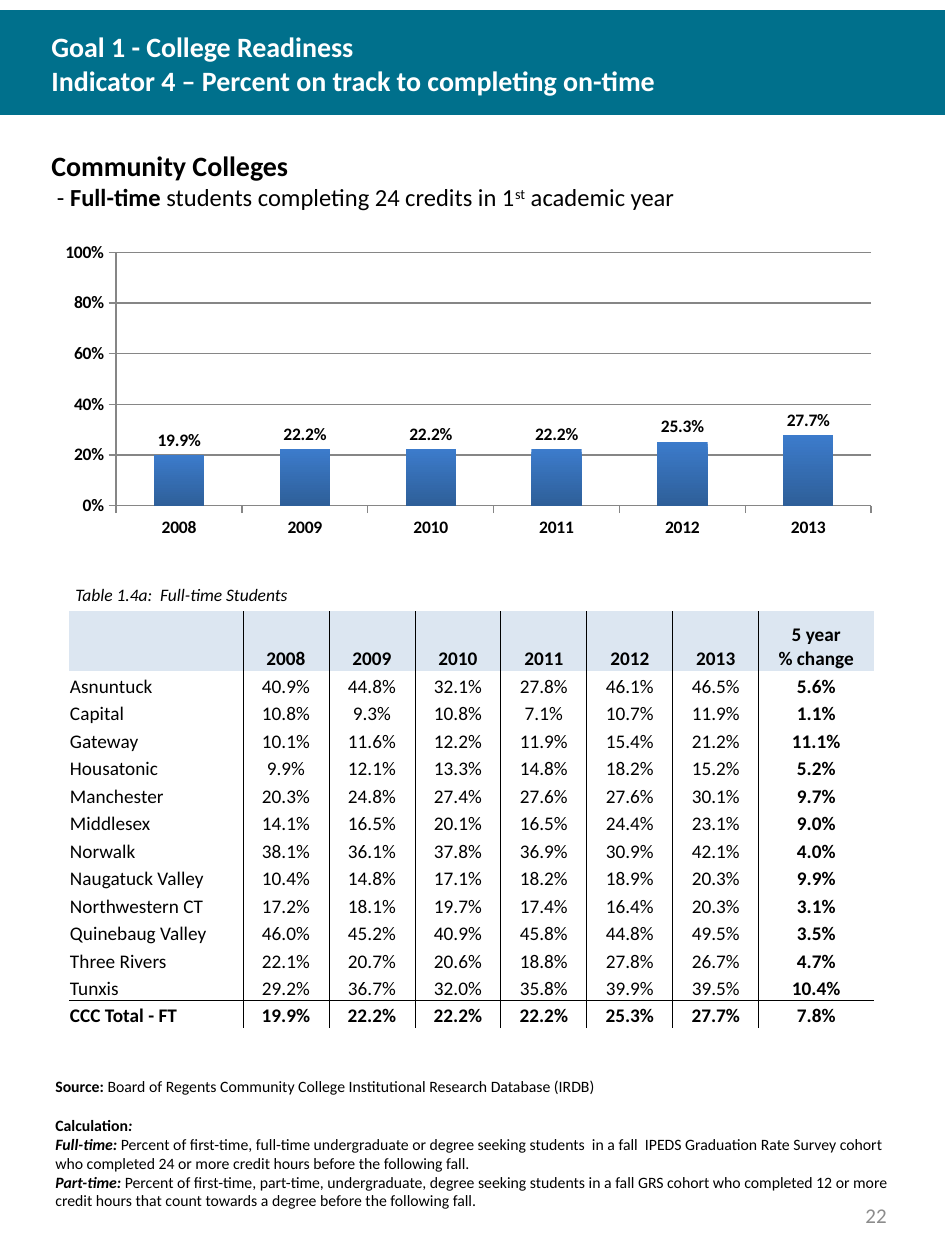
import copy

import pptx
import pptx.chart.data
import pptx.dml.color
import pptx.enum.chart
import pptx.enum.shapes
import pptx.enum.text
import pptx.oxml
import pptx.oxml.ns
import pptx.util
from lxml import etree

EMU_PER_PX = 914400 / 126
FONT = "Calibri"
BLACK, WHITE, TEAL, GREY = "000000", "FFFFFF", "00708C", "8C8C8C"
HEADER_FILL, GRID = "DCE6F1", "868686"
BAR_TOP, BAR_BOTTOM = "3C7BCB", "2E5F99"
ANCHOR = pptx.enum.text.MSO_ANCHOR
ALIGN = pptx.enum.text.PP_ALIGN

YEARS = ["2008", "2009", "2010", "2011", "2012", "2013"]
TOTALS = [0.199, 0.222, 0.222, 0.222, 0.253, 0.277]
# College, one rate per year, then the change over five years
COLLEGES = [
    ("Asnuntuck", 40.9, 44.8, 32.1, 27.8, 46.1, 46.5, 5.6),
    ("Capital", 10.8, 9.3, 10.8, 7.1, 10.7, 11.9, 1.1),
    ("Gateway", 10.1, 11.6, 12.2, 11.9, 15.4, 21.2, 11.1),
    ("Housatonic", 9.9, 12.1, 13.3, 14.8, 18.2, 15.2, 5.2),
    ("Manchester", 20.3, 24.8, 27.4, 27.6, 27.6, 30.1, 9.7),
    ("Middlesex", 14.1, 16.5, 20.1, 16.5, 24.4, 23.1, 9.0),
    ("Norwalk", 38.1, 36.1, 37.8, 36.9, 30.9, 42.1, 4.0),
    ("Naugatuck Valley", 10.4, 14.8, 17.1, 18.2, 18.9, 20.3, 9.9),
    ("Northwestern CT", 17.2, 18.1, 19.7, 17.4, 16.4, 20.3, 3.1),
    ("Quinebaug Valley", 46.0, 45.2, 40.9, 45.8, 44.8, 49.5, 3.5),
    ("Three Rivers", 22.1, 20.7, 20.6, 18.8, 27.8, 26.7, 4.7),
    ("Tunxis", 29.2, 36.7, 32.0, 35.8, 39.9, 39.5, 10.4),
    ("CCC Total - FT", 19.9, 22.2, 22.2, 22.2, 25.3, 27.7, 7.8),
]


def px(length):
    return pptx.util.Emu(round(length * EMU_PER_PX))


def rgb(color):
    return pptx.dml.color.RGBColor.from_string(color)


def style_font(font, size, color=BLACK, marks=""):
    font.name = FONT
    font.size = pptx.util.Pt(size)
    font.color.rgb = rgb(color)
    font.bold = "b" in marks
    font.italic = "i" in marks


def add_runs(paragraph, runs, size, color=BLACK):
    """Runs are (text, marks[, size]); marks: b bold, i italic, s superscript, n then a new line."""
    for text, marks, *own_size in runs:
        run = paragraph.add_run()
        run.text = text
        style_font(run.font, own_size[0] if own_size else size, color, marks)
        properties = run._r.get_or_add_rPr()
        if "s" in marks:
            properties.set("baseline", "30000")
        if "n" in marks:
            paragraph.add_line_break()
            paragraph._p[-1].append(copy.deepcopy(properties))


def add_text(slide, box, paragraphs, size, color=BLACK, anchor=ANCHOR.MIDDLE, align=ALIGN.LEFT):
    """Paragraphs are (space before in points, runs)."""
    frame = slide.shapes.add_textbox(*map(px, box)).text_frame
    frame.word_wrap = True
    frame.vertical_anchor = anchor
    for index, (space, runs) in enumerate(paragraphs):
        paragraph = frame.add_paragraph() if index else frame.paragraphs[0]
        paragraph.alignment = align
        paragraph.space_before = pptx.util.Pt(space)
        add_runs(paragraph, runs, size, color)


def add_band(slide, box):
    shape = slide.shapes.add_shape(pptx.enum.shapes.MSO_SHAPE.RECTANGLE, *map(px, box))
    shape.shadow.inherit = False
    shape.fill.solid()
    shape.fill.fore_color.rgb = rgb(TEAL)
    shape.line.fill.background()


def style_line(line):
    line.color.rgb = rgb(GRID)
    line.width = pptx.util.Pt(0.75)


def place_plot(chart, **fractions):
    """Fix the inner plot area as fractions of the chart."""
    plot_area = chart._chartSpace.chart.plotArea
    for old in plot_area.findall(pptx.oxml.ns.qn("c:layout")):
        plot_area.remove(old)
    layout = etree.Element(pptx.oxml.ns.qn("c:layout"))
    manual = etree.SubElement(layout, pptx.oxml.ns.qn("c:manualLayout"))
    settings = {"layoutTarget": "inner", "xMode": "edge", "yMode": "edge", **fractions}
    for tag, value in settings.items():
        etree.SubElement(manual, pptx.oxml.ns.qn(f"c:{tag}")).set("val", str(value))
    plot_area.insert(0, layout)


def add_column_chart(slide, box):
    data = pptx.chart.data.CategoryChartData(number_format="0.0%")
    data.categories = YEARS
    data.add_series("Series 1", TOTALS)
    kind = pptx.enum.chart.XL_CHART_TYPE.COLUMN_CLUSTERED
    chart = slide.shapes.add_chart(kind, *map(px, box), data).chart
    chart.has_legend = False
    chart.has_title = False
    style_font(chart.font, 10)
    place_plot(chart, x=0.08, y=0.05, w=0.9, h=0.82)

    # Axes
    for axis in (chart.category_axis, chart.value_axis):
        style_font(axis.tick_labels.font, 10, marks="b")
        style_line(axis.format.line)
        axis.major_tick_mark = pptx.enum.chart.XL_TICK_MARK.OUTSIDE
    values = chart.value_axis
    values.minimum_scale, values.maximum_scale, values.major_unit = 0, 1, 0.2
    values.tick_labels.number_format = "0%"
    values.tick_labels.number_format_is_linked = False
    values.has_major_gridlines = True
    style_line(values.major_gridlines.format.line)

    # Columns and their labels
    plot = chart.plots[0]
    plot.gap_width = 150
    plot.vary_by_categories = False
    fill = plot.series[0].format.fill
    fill.gradient()
    fill.gradient_angle = 270
    for stop, color in zip(fill.gradient_stops, (BAR_TOP, BAR_BOTTOM)):
        stop.color.rgb = rgb(color)
    plot.has_data_labels = True
    labels = plot.data_labels
    labels.show_value = True
    labels.number_format = "0.0%"
    labels.number_format_is_linked = False
    labels.position = pptx.enum.chart.XL_LABEL_POSITION.OUTSIDE_END
    style_font(labels.font, 10, marks="b")


def set_borders(cell, drawn):
    properties = cell._tc.get_or_add_tcPr()
    for side in "LRTB":
        line = etree.SubElement(properties, pptx.oxml.ns.qn(f"a:ln{side}"))
        line.set("w", str(pptx.util.Pt(0.5)))
        if side in drawn:
            fill = etree.SubElement(line, pptx.oxml.ns.qn("a:solidFill"))
            etree.SubElement(fill, pptx.oxml.ns.qn("a:srgbClr")).set("val", BLACK)
        else:
            etree.SubElement(line, pptx.oxml.ns.qn("a:noFill"))


def fill_cell(cell, runs, align, borders, color=None):
    cell.margin_left = cell.margin_right = cell.margin_top = px(1)
    cell.margin_bottom = 0
    cell.vertical_anchor = ANCHOR.BOTTOM
    set_borders(cell, borders)
    if color:
        cell.fill.solid()
        cell.fill.fore_color.rgb = rgb(color)
    else:
        cell.fill.background()
    paragraph = cell.text_frame.paragraphs[0]
    paragraph.alignment = align
    add_runs(paragraph, runs, 11)


def add_rate_table(slide, left, top):
    widths = [174] + [86] * len(YEARS) + [115]
    heights = [60] + [27.5] * len(COLLEGES)
    header = [[]] + [[(year, "b")] for year in YEARS] + [[("5 year", "bn"), ("% change", "b")]]
    rows = [header]
    for name, *rates in COLLEGES:
        rows.append([[(name, "")]] + [[(f"{rate:.1f}%", "")] for rate in rates])
    last_row, last_column = len(rows) - 1, len(widths) - 1

    box = map(px, (left, top, sum(widths), sum(heights)))
    table = slide.shapes.add_table(len(rows), len(widths), *box).table
    table.first_row = table.horz_banding = False
    for column, width in zip(table.columns, widths):
        column.width = px(width)
    for row, height in zip(table.rows, heights):
        row.height = px(height)
    for r, row in enumerate(rows):
        for c, runs in enumerate(row):
            if r == last_row or (r and c == last_column):
                runs = [(text, "b") for text, _ in runs]
            borders = ("L" if c else "") + ("R" if c < last_column else "")
            borders += {last_row - 1: "B", last_row: "T"}.get(r, "")
            align = ALIGN.CENTER if c else ALIGN.LEFT
            fill_cell(table.cell(r, c), runs, align, borders, None if r else HEADER_FILL)


def main():
    presentation = pptx.Presentation()
    presentation.slide_width, presentation.slide_height = px(945), px(1260)
    slide = presentation.slides.add_slide(presentation.slide_layouts[6])

    # Title band and heading
    add_band(slide, (0, 10, 945, 105))
    add_text(slide, (39, 11, 851, 105), [(0, [
        ("Goal 1 - College Readiness", "bn"),
        ("Indicator 4 – Percent on track to completing on-time", "b")])], 16, WHITE)
    add_text(slide, (39, 122, 851, 116), [(0, [
        ("Community Colleges", "bn", 16), (" - ", ""), ("Full-time", "b"),
        (" students completing 24 credits in 1", ""), ("st", "s"), (" academic year", "")])], 14)

    # Chart and table
    add_column_chart(slide, (49, 237, 839, 309))
    add_text(slide, (63, 577, 273, 34), [(0, [("Table 1.4a:  Full-time Students", "i")])], 10)
    add_rate_table(slide, 69, 611)

    # Source, calculation and page number
    add_text(slide, (43, 1071, 867, 146), [
        (0, [("Source: ", "b"), ("Board of Regents Community College Institutional "
                                 "Research Database (IRDB)", "")]),
        (11, [("Calculation", "b"), (":", "bi")]),
        (0, [("Full-time: ", "bi"),
             ("Percent of first-time, full-time undergraduate or degree seeking students  in a fall  "
              "IPEDS Graduation Rate Survey cohort who completed 24 or more credit hours before "
              "the following fall.", "")]),
        (0, [("Part-time: ", "bi"),
             ("Percent of first-time, part-time, undergraduate, degree seeking students in a fall GRS "
              "cohort who completed 12 or more credit hours that count towards a degree before "
              "the following fall.", "")]),
    ], 9, anchor=ANCHOR.TOP)
    add_text(slide, (678, 1182, 221, 67), [(0, [("22", "")])], 12, GREY, align=ALIGN.RIGHT)

    presentation.save("out.pptx")


if __name__ == "__main__":
    main()
